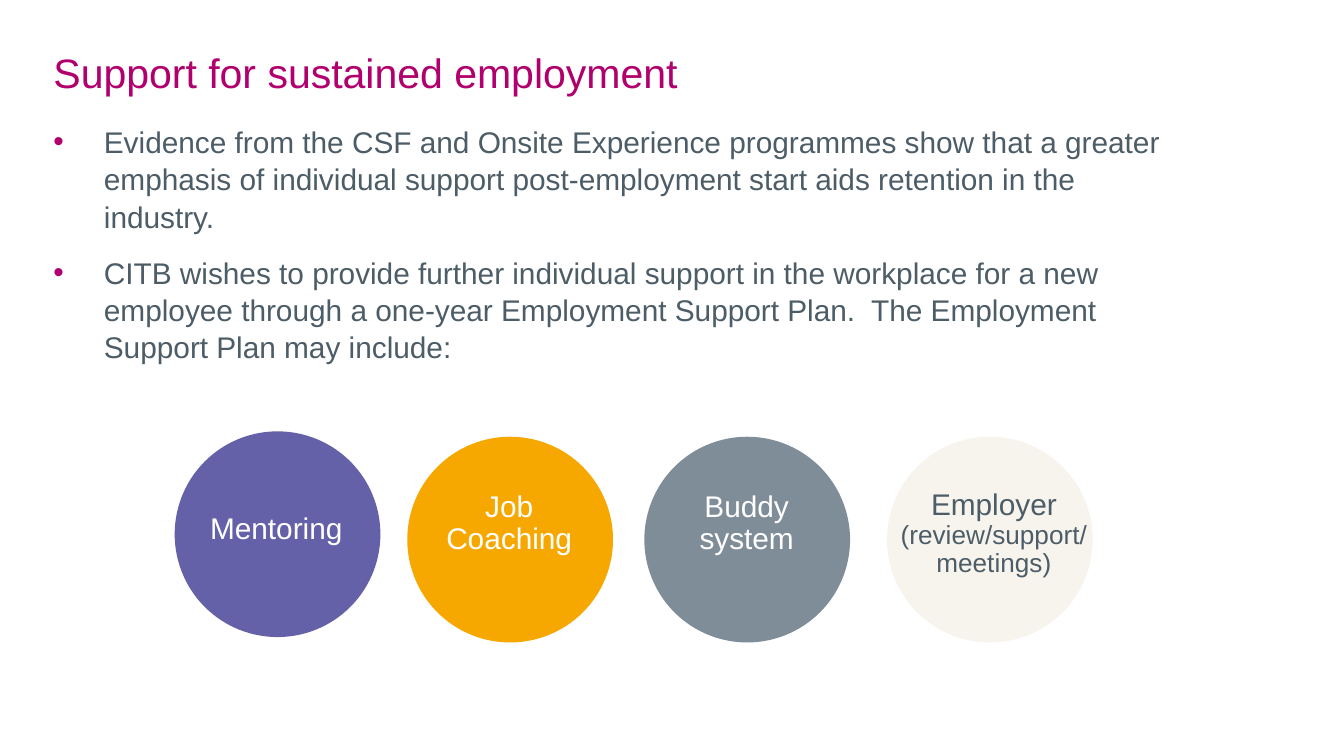
"""Build the slide on support for sustained employment."""
from lxml.etree import SubElement
from pptx import Presentation
from pptx.dml.color import RGBColor
from pptx.enum.shapes import MSO_SHAPE
from pptx.enum.text import PP_ALIGN
from pptx.oxml.ns import qn
from pptx.util import Pt

MAGENTA, SLATE, WHITE = "B1006E", "4D5D68", "FFFFFF"
BODY = {"line_spacing": 1.04}
TIGHT = {"line_spacing": 0.9}
CENTERED = {"line_spacing": 0.9, "alignment": PP_ALIGN.CENTER}


def color(value):
    return RGBColor.from_string(value)


def add_text(page, bounds, paragraphs, ink, layout):
    box = page.shapes.add_textbox(*(Pt(length) for length in bounds))
    frame = box.text_frame
    frame.word_wrap = True
    for index, spans in enumerate(paragraphs):
        para = frame.add_paragraph() if index else frame.paragraphs[0]
        for name, value in layout.items():
            setattr(para, name, value)
        para.space_before = Pt(10 if index else 0)
        for text, size in spans:
            span = para.add_run()
            span.text = text
            for name, value in {"name": "Arial", "size": Pt(size)}.items():
                setattr(span.font, name, value)
            span.font.color.rgb = color(ink)
    return frame


deck = Presentation()
deck.slide_width, deck.slide_height = Pt(720), Pt(405)
page = deck.slides.add_slide(deck.slide_layouts[6])

points = [
    "Evidence from the CSF and Onsite Experience programmes show that a greater "
    "emphasis of individual support post-employment start aids retention in the industry.",
    "CITB wishes to provide further individual support in the workplace for a new "
    "employee through a one-year Employment Support Plan.  The Employment Support Plan may include:",
]
body = add_text(page, (21.6, 62, 623.5, 157.7), [[(point, 16)] for point in points], SLATE, BODY)
for para in body.paragraphs:
    properties = para._p.get_or_add_pPr()
    properties.set("marL", str(Pt(27)))
    properties.set("indent", str(Pt(-27)))
    bullet_color = SubElement(properties, qn("a:buClr"))
    SubElement(bullet_color, qn("a:srgbClr"), val=MAGENTA)
    SubElement(properties, qn("a:buFont"), typeface="Arial")
    SubElement(properties, qn("a:buChar"), char="•")

add_text(page, (21.6, 25, 667.4, 29.5), [[("Support for sustained employment", 22)]], MAGENTA, TIGHT)

diameter = 110.2
supports = [
    (93.6, 231.1, "6561A9", (103, 271.5, 90, 34.6), [("Mentoring", 16)], WHITE),
    (218.2, 234, "F6A800", (227.8, 260, 90, 50.4), [("Job Coaching", 16)], WHITE),
    (345.2, 234, "7F8D99", (355, 260, 90, 50.4), [("Buddy system", 16)], WHITE),
    (475.2, 234, "F7F4ED", (475.2, 258.7, 114.5, 50.4),
     [("Employer ", 16), ("(review/support/meetings)", 14)], SLATE),
]
for left, top, fill, bounds, spans, ink in supports:
    circle = page.shapes.add_shape(MSO_SHAPE.OVAL, Pt(left), Pt(top), Pt(diameter), Pt(diameter))
    circle.shadow.inherit = False
    circle.fill.solid()
    circle.fill.fore_color.rgb = color(fill)
    circle.line.fill.background()
    label = add_text(page, bounds, [spans], ink, CENTERED)
    label.margin_left = label.margin_right = Pt(6)

deck.save("out.pptx")
